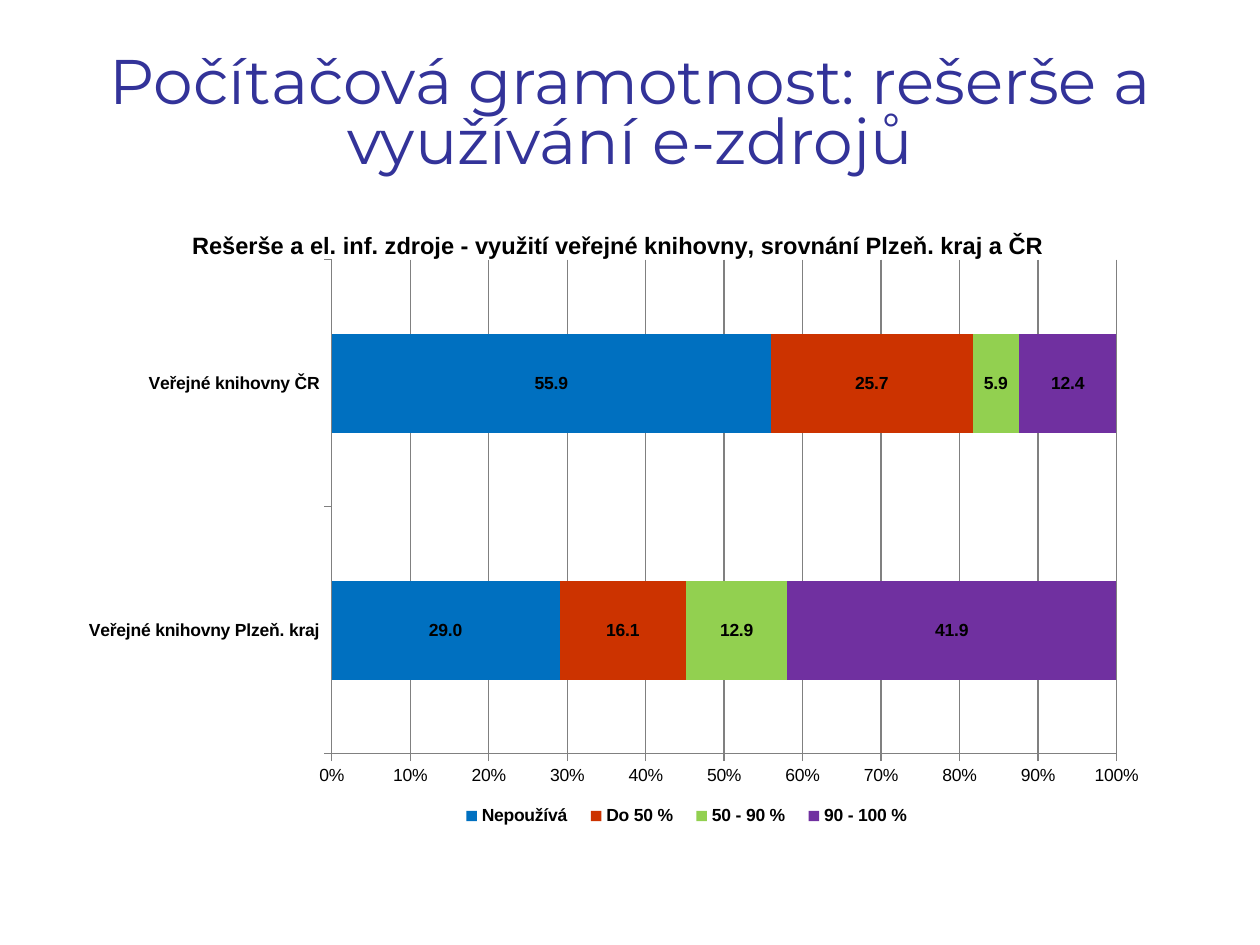
from lxml import etree
from pptx import Presentation
from pptx.chart.data import CategoryChartData
from pptx.dml.color import RGBColor
from pptx.enum.chart import XL_CHART_TYPE, XL_LABEL_POSITION, XL_LEGEND_POSITION, XL_TICK_MARK
from pptx.enum.text import MSO_ANCHOR, PP_ALIGN
from pptx.oxml.ns import qn
from pptx.util import Inches, Pt

COLORS = {"title": "333399", "text": "000000", "line": "808080"}
NUMBER_FORMAT = "###0.0"
CATEGORIES = ["Veřejné knihovny Plzeň. kraj", "Veřejné knihovny ČR"]
SERIES = [
    ("Nepoužívá", (29.0, 55.9), "0070C0"),
    ("Do 50 %", (16.1, 25.7), "CC3300"),
    ("50 - 90 %", (12.9, 5.9), "92D050"),
    ("90 - 100 %", (41.9, 12.4), "7030A0"),
]


def set_font(font, color=COLORS["text"], **values):
    for name, value in values.items():
        setattr(font, name, value)
    font.color.rgb = RGBColor.from_string(color)


def set_layout(parent, index, inner, **fractions):
    """Place a chart part by fractions of the chart's size."""
    for old in parent.findall(qn("c:layout")):
        parent.remove(old)
    layout = etree.Element(qn("c:layout"))
    manual = etree.SubElement(layout, qn("c:manualLayout"))
    settings = {"layoutTarget": "inner"} if inner else {}
    settings.update(xMode="edge", yMode="edge", **fractions)
    for name, value in settings.items():
        etree.SubElement(manual, qn(f"c:{name}")).set("val", str(value))
    parent.insert(index, layout)


presentation = Presentation()
presentation.slide_width = Inches(10)
presentation.slide_height = Inches(7.5)
slide = presentation.slides.add_slide(presentation.slide_layouts[6])

# Slide title
title_box = slide.shapes.add_textbox(Inches(0.5), Inches(0.3), Inches(9), Inches(1.25))
title_frame = title_box.text_frame
title_frame.word_wrap = True
title_frame.vertical_anchor = MSO_ANCHOR.MIDDLE
paragraph = title_frame.paragraphs[0]
paragraph.alignment = PP_ALIGN.CENTER
paragraph.line_spacing = 0.8
run = paragraph.add_run()
run.text = "Počítačová gramotnost: rešerše a využívání e-zdrojů"
set_font(run.font, COLORS["title"], name="Montserrat", size=Pt(36))

# Chart
chart_data = CategoryChartData(number_format=NUMBER_FORMAT)
chart_data.categories = CATEGORIES
for name, values, color in SERIES:
    chart_data.add_series(name, values)
chart = slide.shapes.add_chart(
    XL_CHART_TYPE.BAR_STACKED_100,
    Inches(0.5), Inches(1.75), Inches(9), Inches(4.95), chart_data,
).chart
set_font(chart.font, name="Arial", size=Pt(10))

# Slightly under 14 pt, so that the chart title stays on one line
chart.has_title = True
chart_title = chart.chart_title.text_frame
chart_title.text = "Rešerše a el. inf. zdroje - využití veřejné knihovny, srovnání Plzeň. kraj a ČR"
chart_title.word_wrap = False
set_font(chart_title.paragraphs[0].runs[0].font, name="Arial", size=Pt(13.5), bold=True)

chart.has_legend = True
chart.legend.position = XL_LEGEND_POSITION.RIGHT
chart.legend.include_in_layout = False
set_font(chart.legend.font, name="Arial", size=Pt(10), bold=True)

# Axes
for axis, bold in ((chart.category_axis, True), (chart.value_axis, False)):
    axis.major_tick_mark = XL_TICK_MARK.OUTSIDE
    axis.minor_tick_mark = XL_TICK_MARK.NONE
    axis.format.line.color.rgb = RGBColor.from_string(COLORS["line"])
    set_font(axis.tick_labels.font, name="Arial", size=Pt(10), bold=bold)
value_axis = chart.value_axis
value_axis.minimum_scale, value_axis.maximum_scale, value_axis.major_unit = 0, 1, 0.1
value_axis.has_major_gridlines = True
value_axis.major_gridlines.format.line.color.rgb = RGBColor.from_string(COLORS["line"])
value_axis.tick_labels.number_format = "0%"
value_axis.tick_labels.number_format_is_linked = False

# Bars
plot = chart.plots[0]
plot.gap_width = 150
plot.overlap = 100
plot.vary_by_categories = False
for series, (name, values, color) in zip(plot.series, SERIES):
    series.format.fill.solid()
    series.format.fill.fore_color.rgb = RGBColor.from_string(color)
    labels = series.data_labels
    labels.show_value = True
    labels.number_format = NUMBER_FORMAT
    labels.number_format_is_linked = False
    labels.position = XL_LABEL_POSITION.CENTER
    set_font(labels.font, name="Arial", size=Pt(10), bold=True)

# Positions inside the chart
title_part, plot_area, legend = (
    chart.element.find(".//" + qn(tag)) for tag in ("c:title", "c:plotArea", "c:legend")
)
set_layout(title_part, 1, False, x=0.11, y=0.01)
set_layout(plot_area, 0, True, x=0.237, y=0.063, w=0.692, h=0.792)
set_layout(legend, 1, False, x=0.34, y=0.93, w=0.42, h=0.05)

presentation.save("out.pptx")
